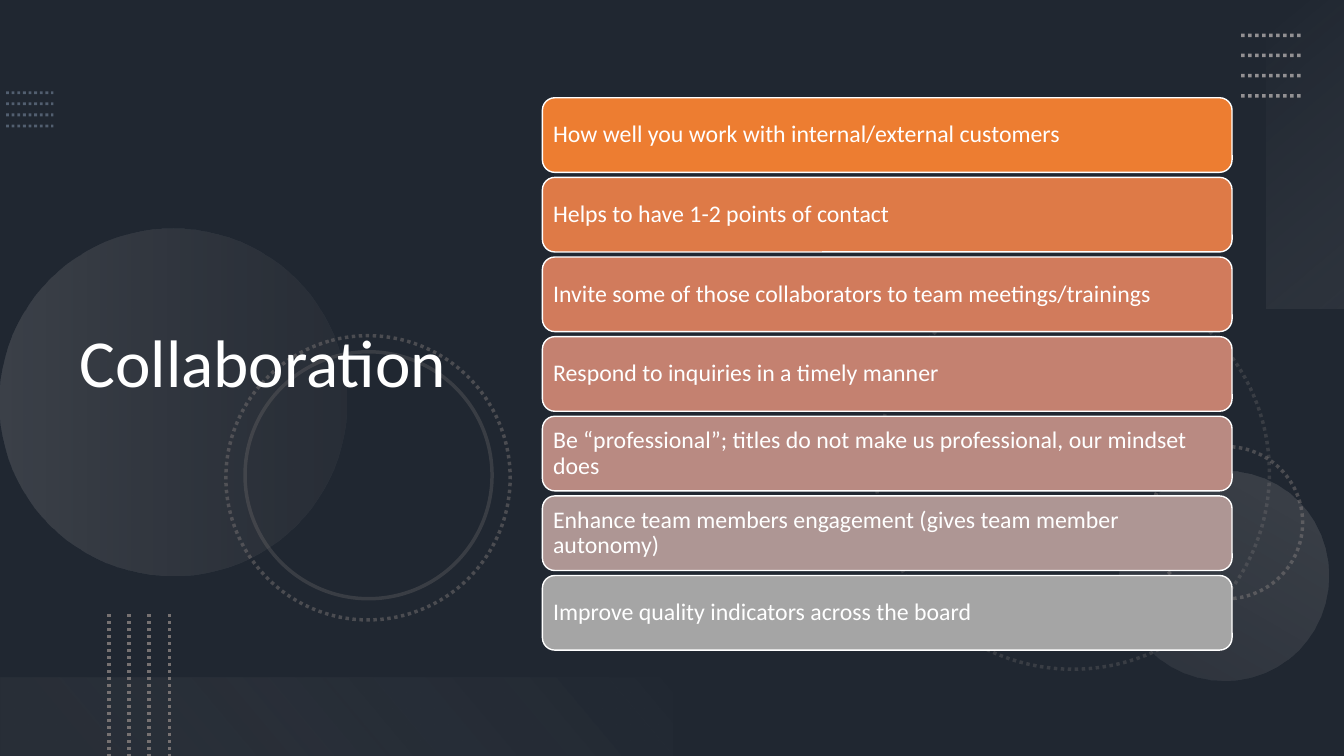
"""Build the Collaboration slide: a title beside seven stacked bars."""
from pptx import Presentation
from pptx import util as u
from pptx.dml.color import RGBColor
from pptx.enum import dml, shapes, text
from pptx.oxml.ns import qn
from lxml import etree

WIDTH, HEIGHT = 13.33, 7.5
FONT, WHITE = "Calibri", "FFFFFF"
TITLE = "Collaboration"
PRACTICES = [
    ("How well you work with internal/external customers", "ED7D31"),
    ("Helps to have 1-2 points of contact", "DE7A47"),
    ("Invite some of those collaborators to team meetings/trainings", "D17B5C"),
    ("Respond to inquiries in a timely manner", "C48170"),
    ("Be “professional”; titles do not make us professional, our mindset does", "B98A82"),
    ("Enhance team members engagement (gives team member autonomy)", "AE9694"),
    ("Improve quality indicators across the board", "A5A5A5"),
]
BAR_LEFT, BAR_TOP, BAR_WIDTH, BAR_HEIGHT, BAR_PITCH = 5.38, 0.97, 6.84, 0.74, 0.79

# left, top, diameter, rotation, dotted, opacity
RINGS_BEHIND = [(8.69, 2.74, 3.9, 75, True, 30), (11.41, 4.43, 1.51, 270, True, 50)]
RINGS_FRONT = [(2.24, 3.33, 2.82, 75, True, 50), (2.43, 3.49, 2.45, 75, False, 30)]
# box, rotation, gradient angle, stops of (position, colour, opacity)
DISCS = [
    ((0, 2.27, 3.44, 3.44), 270, 90, [(0, "AFABAB", 20), (1, "767171", 10)]),
    ((11.1, 4.67, 2.08, 2.08), 210, 90, [(0, "AFABAB", 10), (1, "AFABAB", 20)]),
]
CORNER_BAND = ((11.42, 1.14, 3.06, 0.78), 270, 140, [(0, "F5F5F5", 0), (1, "AFABAB", 10)])
FLOOR_BAND = ((0, 6.72, 6.67, 0.78), 180, 140, [(0.1, "767171", 10), (1, "F1F0F0", 0)])
# first start, run, step to the next line, colour, width, opacity
LEFT_DOTS = ((0.06, 0.92), (0.47, 0), (0, 0.11), "8497B0", 2, 50)
RIGHT_DOTS = ((12.31, 0.35), (0.6, 0), (0, 0.2), "AFABAB", 2.5, 80)
FLOOR_DOTS = ((1.08, 6.09), (0, 1.41), (0.2, 0), "767171", 2.5, 100)
DOT_LINES = 4


def color(value):
    """Turn a hex string into a colour."""
    return RGBColor.from_string(value)


def inches(*lengths):
    """Turn numbers into slide lengths."""
    return [u.Inches(length) for length in lengths]


def fade(item, *opacities):
    """Give the colours of an item, in order, their opacity in percent."""
    for tint, opacity in zip(item._element.spPr.iter(qn("a:srgbClr")), opacities):
        etree.SubElement(tint, qn("a:alpha")).set("val", str(opacity * 1000))


def stroke(item, tint, width, dotted=False):
    """Set an item's line."""
    item.line.color.rgb = color(tint)
    item.line.width = u.Pt(width)
    if dotted:
        item.line.dash_style = dml.MSO_LINE.ROUND_DOT


def add_form(slide, kind, box, rotation=0):
    """Add a preset shape without shadow or line."""
    form = slide.shapes.add_shape(kind, *inches(*box))
    form.rotation = rotation
    form.shadow.inherit = False
    form.line.fill.background()
    return form


def add_ring(slide, left, top, diameter, rotation, dotted, opacity):
    """Add an open circle."""
    box = (left, top, diameter, diameter)
    ring = add_form(slide, shapes.MSO_SHAPE.OVAL, box, rotation)
    ring.fill.background()
    stroke(ring, "767171", 2.5, dotted)
    fade(ring, opacity)


def add_glow(slide, kind, box, rotation, angle, stops):
    """Add a shape with a translucent gradient."""
    glow = add_form(slide, kind, box, rotation)
    glow.fill.gradient()
    glow.fill.gradient_angle = 360 - angle
    for stop, (position, tint, _) in zip(glow.fill.gradient_stops, stops):
        stop.position = position
        stop.color.rgb = color(tint)
    fade(glow, *(opacity for _, _, opacity in stops))


def add_dots(slide, start, run, step, tint, width, opacity):
    """Add evenly spaced dotted lines."""
    for index in range(DOT_LINES):
        x, y = (begin + index * gap for begin, gap in zip(start, step))
        dots = slide.shapes.add_connector(
            shapes.MSO_CONNECTOR.STRAIGHT, *inches(x, y, x + run[0], y + run[1]))
        stroke(dots, tint, width, True)
        fade(dots, opacity)
        etree.SubElement(dots._element.spPr, qn("a:effectLst"))


def write(item, words, size, inset):
    """Write left-aligned, vertically centred white text."""
    frame = item.text_frame
    frame.text = words
    frame.word_wrap = True
    frame.vertical_anchor = text.MSO_ANCHOR.MIDDLE
    frame.margin_left = frame.margin_right = u.Inches(inset)
    frame.margin_top = frame.margin_bottom = u.Inches(inset)
    paragraph = frame.paragraphs[0]
    paragraph.alignment = text.PP_ALIGN.LEFT
    paragraph.line_spacing = 0.9
    font = paragraph.runs[0].font
    font.name, font.size, font.color.rgb = FONT, u.Pt(size), color(WHITE)


def main():
    """Draw the slide from back to front and save it."""
    deck = Presentation()
    deck.slide_width, deck.slide_height = inches(WIDTH, HEIGHT)
    slide = deck.slides.add_slide(deck.slide_layouts[6])
    slide.background.fill.solid()
    slide.background.fill.fore_color.rgb = color("44546A")

    shade = add_form(slide, shapes.MSO_SHAPE.RECTANGLE, (0, 0, WIDTH, HEIGHT))
    shade.fill.solid()
    shade.fill.fore_color.rgb = color("000000")
    fade(shade, 53)

    add_dots(slide, *LEFT_DOTS)
    for ring in RINGS_BEHIND:
        add_ring(slide, *ring)
    for disc in DISCS:
        add_glow(slide, shapes.MSO_SHAPE.OVAL, *disc)
    for ring in RINGS_FRONT:
        add_ring(slide, *ring)
    for band, dots in ((CORNER_BAND, RIGHT_DOTS), (FLOOR_BAND, FLOOR_DOTS)):
        add_glow(slide, shapes.MSO_SHAPE.RECTANGLE, *band)
        add_dots(slide, *dots)

    title = slide.shapes.add_textbox(*inches(0.69, 0.54, 4.59, 6.17))
    write(title, TITLE, 48, 0.1)

    for row, (practice, tint) in enumerate(PRACTICES):
        box = (BAR_LEFT, BAR_TOP + row * BAR_PITCH, BAR_WIDTH, BAR_HEIGHT)
        bar = add_form(slide, shapes.MSO_SHAPE.ROUNDED_RECTANGLE, box)
        bar.fill.solid()
        bar.fill.fore_color.rgb = color(tint)
        stroke(bar, WHITE, 1)
        write(bar, practice, 17, 0.07)

    deck.save("out.pptx")


if __name__ == "__main__":
    main()
